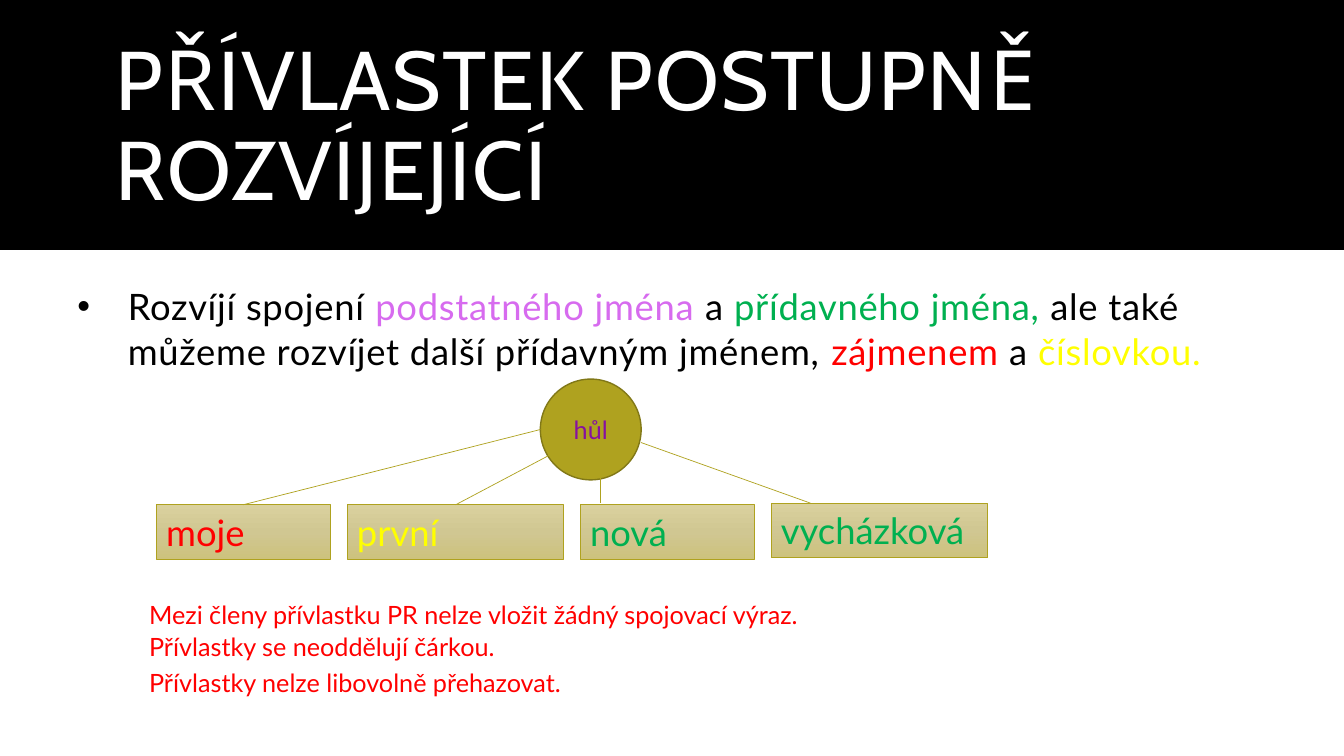
import copy
from dataclasses import dataclass

import pptx
import pptx.dml.color
import pptx.enum.shapes
import pptx.enum.text
import pptx.oxml
import pptx.oxml.ns
import pptx.util

Pt = pptx.util.Pt
ShapeKind = pptx.enum.shapes.MSO_SHAPE
Anchor = pptx.enum.text.MSO_ANCHOR
Align = pptx.enum.text.PP_ALIGN


@dataclass(frozen=True)
class Theme:
    heading_font: str = "Cabin"
    body_font: str = "Lato"
    black: str = "000000"
    white: str = "FFFFFF"
    noun: str = "D76BEF"
    adjective: str = "00B050"
    pronoun: str = "FF0000"
    numeral: str = "FFFF00"
    root_word: str = "8611A0"
    olive: str = "AFA21F"
    olive_dark: str = "817817"
    box_gradient: tuple = ((0, "DAD19E"), (0.5, "D0C792"), (1, "CDC27D"))
    title_size: float = 59.4
    body_size: float = 26
    small_size: float = 18
    thin_line: float = 0.5


THEME = Theme()


def rgb(value):
    return pptx.dml.color.RGBColor.from_string(value)


def format_run(run, size, color, font=THEME.body_font, tracking=0):
    """Style a run; tracking is the letter spacing in points."""
    run.font.name = font
    run.font.size = Pt(size)
    run.font.color.rgb = rgb(color)
    if tracking:
        run._r.get_or_add_rPr().set("spc", str(round(tracking * 100)))


def set_text(shape, text, size, color, align=Align.LEFT, anchor=Anchor.TOP, **style):
    frame = shape.text_frame
    frame.word_wrap = True
    frame.vertical_anchor = anchor
    frame.text = text
    paragraph = frame.paragraphs[0]
    paragraph.alignment = align
    format_run(paragraph.runs[0], size, color, **style)
    return paragraph


def add_text(slide, box, text, size, color, **style):
    textbox = slide.shapes.add_textbox(*map(Pt, box))
    return set_text(textbox, text, size, color, **style)


def add_shape(slide, kind, box, line=None, weight=THEME.thin_line):
    shape = slide.shapes.add_shape(kind, *map(Pt, box))
    shape.shadow.inherit = False
    if line:
        shape.line.color.rgb = rgb(line)
        shape.line.width = Pt(weight)
    else:
        shape.line.fill.background()
    return shape


def fill_solid(shape, color):
    shape.fill.solid()
    shape.fill.fore_color.rgb = rgb(color)


def fill_gradient(shape, stops):
    """Fill from top to bottom with any number of (position, colour) stops."""
    shape.fill.gradient()
    shape.fill.gradient_angle = 270
    stop_list = shape._element.spPr.find(".//" + pptx.oxml.ns.qn("a:gsLst"))
    while len(stop_list) < len(stops):
        stop_list.append(copy.deepcopy(stop_list[0]))
    for stop, (position, color) in zip(shape.fill.gradient_stops, stops):
        stop.position = position
        stop.color.rgb = rgb(color)


def add_bullet_paragraph(slide, box, parts):
    """Add one bulleted paragraph made of (text, colour) parts."""
    frame = slide.shapes.add_textbox(*map(Pt, box)).text_frame
    frame.word_wrap = True
    paragraph = frame.paragraphs[0]
    paragraph.line_spacing = 1.01
    paragraph.space_before = paragraph.space_after = Pt(7)
    properties = paragraph._p.get_or_add_pPr()
    properties.set("marL", str(Pt(36)))
    properties.set("indent", str(-Pt(36)))
    namespace = pptx.oxml.ns.nsdecls("a")
    for markup in (f'<a:buFont {namespace} typeface="Arial"/>',
                   f'<a:buChar {namespace} char="•"/>'):
        properties.append(pptx.oxml.parse_xml(markup))
    for text, color in parts:
        run = paragraph.add_run()
        run.text = text
        format_run(run, THEME.body_size, color, tracking=0.5)


def add_word_box(slide, box, word, color):
    shape = add_shape(slide, ShapeKind.RECTANGLE, box, THEME.olive)
    fill_gradient(shape, THEME.box_gradient)
    set_text(shape, word, THEME.body_size, color)


def add_line(slide, start, end):
    connector = slide.shapes.add_connector(
        pptx.enum.shapes.MSO_CONNECTOR.STRAIGHT, *map(Pt, start + end))
    connector.line.color.rgb = rgb(THEME.olive)
    connector.line.width = Pt(THEME.thin_line)
    connector._element.spPr.append(pptx.oxml.parse_xml(
        f'<a:effectLst {pptx.oxml.ns.nsdecls("a")}/>'))


def add_title(slide):
    band = add_shape(slide, ShapeKind.RECTANGLE, (0, 0, 960, 178.5))
    fill_solid(band, THEME.black)
    paragraph = add_text(
        slide, (75.6, 25.2, 808.6, 133.9), "PŘÍVLASTEK POSTUPNĚ ROZVÍJEJÍCÍ",
        THEME.title_size, THEME.white, anchor=Anchor.MIDDLE,
        font=THEME.heading_font, tracking=1.2)
    paragraph.line_spacing = 0.9


def add_definition(slide):
    add_bullet_paragraph(slide, (48.2, 199.4, 882, 324.7), (
        ("Rozvíjí spojení ", THEME.black),
        ("podstatného jména ", THEME.noun),
        ("a ", THEME.black),
        ("přídavného jména, ", THEME.adjective),
        ("ale také můžeme rozvíjet další přídavným jménem, ", THEME.black),
        ("zájmenem", THEME.pronoun),
        (" a ", THEME.black),
        ("číslovkou.", THEME.numeral),
    ))


def add_word_tree(slide):
    narrow, wide, gap, left = 124.6, 154.8, 11.7, 111.6
    row_top, raised_top = 360.6, 359.4
    for word, color, width, top in (
        ("moje", THEME.pronoun, narrow, row_top),
        ("první", THEME.numeral, wide, row_top),
        ("nová", THEME.adjective, narrow, row_top),
        ("vycházková", THEME.adjective, wide, raised_top),
    ):
        add_word_box(slide, (left, top, width, 39), word, color)
        left += width + gap

    root = add_shape(slide, ShapeKind.OVAL, (386, 270.8, 72, 72), THEME.olive_dark, 1)
    fill_solid(root, THEME.olive)
    set_text(root, "hůl", THEME.small_size, THEME.root_word,
             align=Align.CENTER, anchor=Anchor.MIDDLE)

    for start, end in (
        ((386, 306.8), (173.5, row_top)),
        ((394.6, 324), (325.4, row_top)),
        ((429.1, 330.5), (429.1, raised_top)),
        ((457.9, 316.1), (578.9, raised_top)),
    ):
        add_line(slide, start, end)


def add_rules(slide):
    for top, text in (
        (424.8, "Mezi členy přívlastku PR nelze vložit žádný spojovací výraz."),
        (447.1, "Přívlastky se neoddělují čárkou."),
        (473, "Přívlastky nelze libovolně přehazovat."),
    ):
        add_text(slide, (99.4, top, 481, 29), text, THEME.small_size, THEME.pronoun)


def main():
    presentation = pptx.Presentation()
    presentation.slide_width, presentation.slide_height = Pt(960), Pt(540)
    slide = presentation.slides.add_slide(presentation.slide_layouts[6])
    add_title(slide)
    add_definition(slide)
    add_word_tree(slide)
    add_rules(slide)
    presentation.save("out.pptx")


if __name__ == "__main__":
    main()
